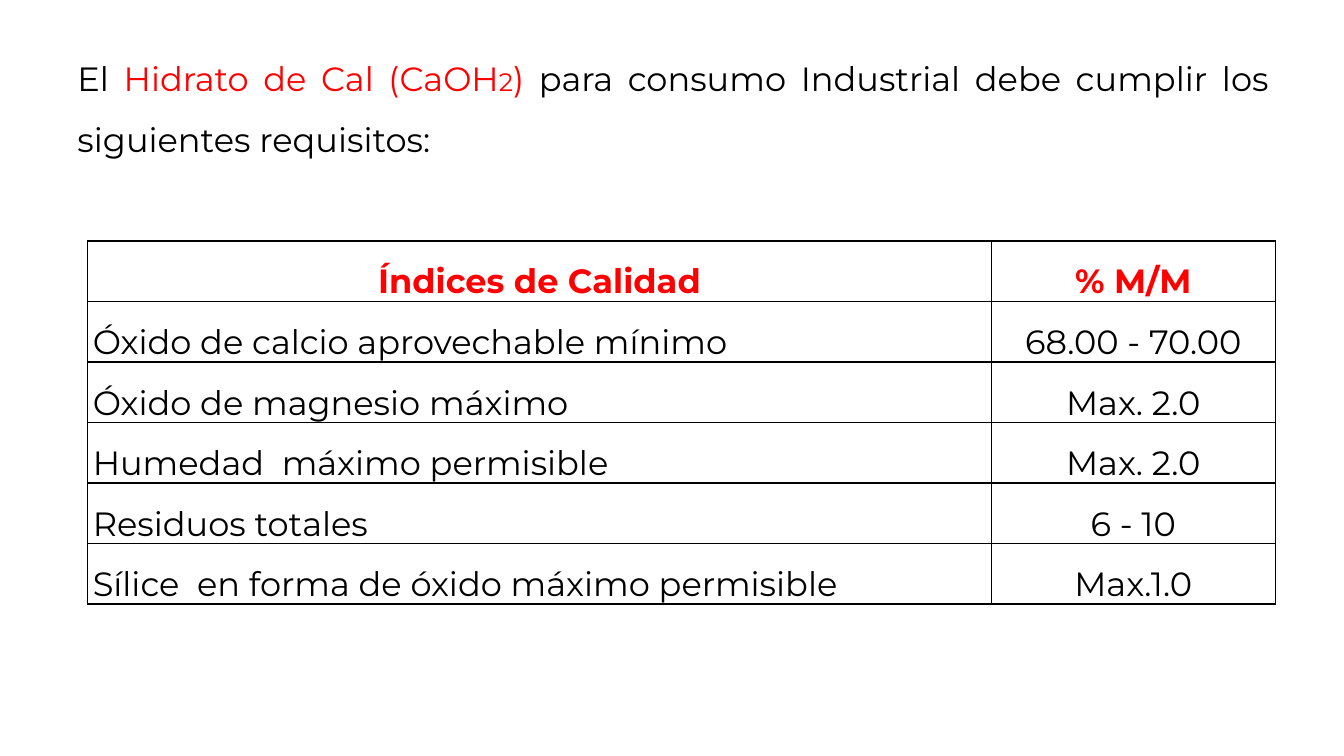
from lxml import etree
from pptx import Presentation
from pptx import util as u
from pptx.dml.color import RGBColor
from pptx.enum import text
from pptx.oxml import ns

COLORS = {"ink": "000000", "accent": "FF0000"}
FONT = "Montserrat"
ALIGN = text.PP_ALIGN

# (wording, size, colour)
INTRO = [
    ("El ", 24, "ink"),
    ("Hidrato de Cal (CaOH", 24, "accent"),
    ("2", 18, "accent"),
    (") ", 24, "accent"),
    ("para consumo Industrial debe cumplir los siguientes requisitos:", 24, "ink"),
]
REQUIREMENTS = [
    ("Índices de Calidad", "% M/M"),
    ("Óxido de calcio aprovechable mínimo", "68.00 - 70.00"),
    ("Óxido de magnesio máximo", "Max. 2.0"),
    ("Humedad  máximo permisible", "Max. 2.0"),
    ("Residuos totales", "6 - 10"),
    ("Sílice  en forma de óxido máximo permisible", "Max.1.0"),
]
INTRO_BOX = (0.67, 0.33, 12.01, 1.31)
TABLE_LEFT, TABLE_TOP = 0.87, 2.39
COLUMN_WIDTHS = (8.96, 2.82)
ROW_HEIGHT = 0.6
CELL_FORMAT = {
    "margin_left": u.Inches(0.05),
    "margin_right": u.Inches(0.05),
    "margin_top": 0,
    "margin_bottom": 0,
    "vertical_anchor": text.MSO_ANCHOR.MIDDLE,
}


def add_run(paragraph, wording, size, color, bold=False):
    run = paragraph.add_run()
    run.text = wording
    for name, value in {"name": FONT, "size": u.Pt(size), "bold": bold}.items():
        setattr(run.font, name, value)
    run.font.color.rgb = RGBColor.from_string(COLORS[color])


def add_borders(cell):
    """Draw a 1 pt line on all four sides; lines must precede the fill."""
    properties = cell._tc.get_or_add_tcPr()
    for position, side in enumerate(("lnL", "lnR", "lnT", "lnB")):
        line = etree.Element(ns.qn(f"a:{side}"), w=str(u.Pt(1)))
        fill = etree.SubElement(line, ns.qn("a:solidFill"))
        etree.SubElement(fill, ns.qn("a:srgbClr"), val=COLORS["ink"])
        properties.insert(position, line)


def add_intro(slide):
    frame = slide.shapes.add_textbox(*map(u.Inches, INTRO_BOX)).text_frame
    frame.word_wrap = True
    paragraph = frame.paragraphs[0]
    paragraph.alignment = ALIGN.JUSTIFY
    paragraph.line_spacing = 1.5
    for wording, size, color in INTRO:
        add_run(paragraph, wording, size, color)


def add_requirements(slide):
    rows = len(REQUIREMENTS)
    size = (TABLE_LEFT, TABLE_TOP, sum(COLUMN_WIDTHS), rows * ROW_HEIGHT)
    table = slide.shapes.add_table(
        rows, len(COLUMN_WIDTHS), *map(u.Inches, size)).table
    table.first_row = table.horz_banding = False
    for column, width in zip(table.columns, COLUMN_WIDTHS):
        column.width = u.Inches(width)

    for row, wordings in enumerate(REQUIREMENTS):
        header = row == 0
        for column, wording in enumerate(wordings):
            cell = table.cell(row, column)
            for name, value in CELL_FORMAT.items():
                setattr(cell, name, value)
            cell.fill.background()
            add_borders(cell)
            paragraph = cell.text_frame.paragraphs[0]
            centred = header or column == 1
            paragraph.alignment = ALIGN.CENTER if centred else ALIGN.JUSTIFY
            paragraph.line_spacing = 1.5
            add_run(paragraph, wording, 24, "accent" if header else "ink", header)


def main():
    deck = Presentation()
    deck.slide_width, deck.slide_height = u.Inches(13.33), u.Inches(7.5)
    slide = deck.slides.add_slide(deck.slide_layouts[6])
    add_intro(slide)
    add_requirements(slide)
    deck.save("out.pptx")


if __name__ == "__main__":
    main()
